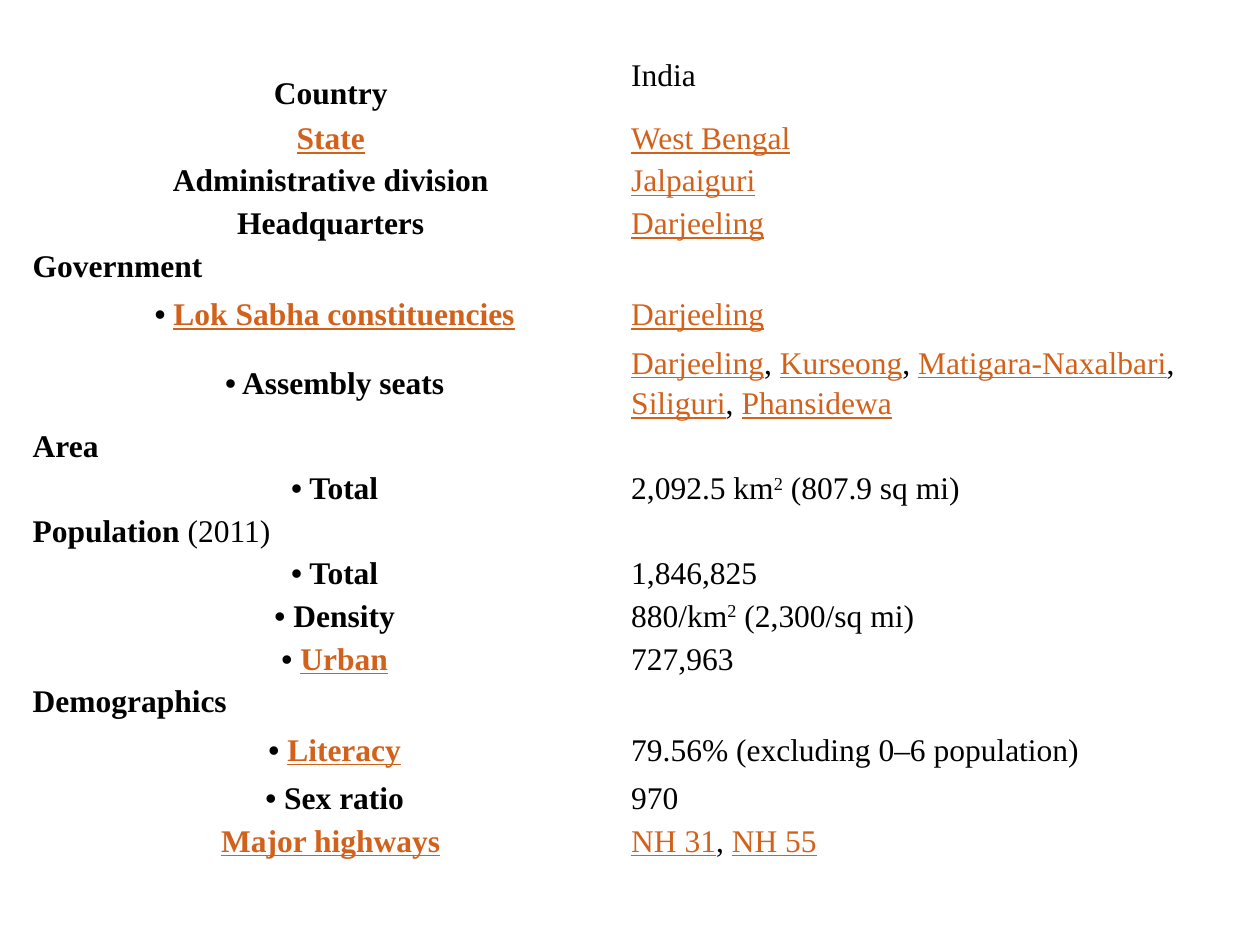
from pptx import Presentation
from pptx.dml.color import RGBColor
from pptx.enum.text import MSO_ANCHOR, PP_ALIGN
from pptx.util import Inches, Pt

MIDDLE = MSO_ANCHOR.MIDDLE
LEFT, CENTER = PP_ALIGN.LEFT, PP_ALIGN.CENTER
BLANK_LAYOUT = 6
BLACK, ORANGE = "000000", "D2611C"
FONT = {"name": "Times New Roman", "size": Pt(18)}
PLAIN = {"color": BLACK, "bold": False, "underline": False}
BOLD = {**PLAIN, "bold": True}
LINK = {"color": ORANGE, "bold": False, "underline": True}
BOLD_LINK = {**LINK, "bold": True}
RAISED = {**PLAIN, "baseline": "30000"}
BULLET = " • "
INSET = 0.01
LOWERED_INSET = 0.3
ROW_HEIGHT = 0.33
SPECIAL_HEIGHTS = {0: 0.66, 5: 0.43, 6: 0.66, 14: 0.43, 17: 0.37}


def hex_color(value):
    return RGBColor.from_string(value)


def label(text):
    return [(text, BOLD)]


def item(text):
    return [(BULLET + text, BOLD)]


def linked_item(text):
    return [(BULLET, BOLD), (text, BOLD_LINK)]


def plain(text):
    return [(text, PLAIN)]


def links(*names):
    spans = [(names[0], LINK)]
    for name in names[1:]:
        spans += [(", ", PLAIN), (name, LINK)]
    return spans


def squared(before, after):
    return [(before, PLAIN), ("2", RAISED), (after, PLAIN)]


DISTRICT_FACTS = [
    (label("Country"), plain("India")),
    ([("State", BOLD_LINK)], links("West Bengal")),
    (label("Administrative division"), links("Jalpaiguri")),
    (label("Headquarters"), links("Darjeeling")),
    (label("Government"), None),
    (linked_item("Lok Sabha constituencies"), links("Darjeeling")),
    (item("Assembly seats"),
     links("Darjeeling", "Kurseong", "Matigara-Naxalbari", "Siliguri", "Phansidewa")),
    (label("Area"), None),
    (item("Total"), squared("2,092.5 km", " (807.9 sq mi)")),
    (label("Population ") + plain("(2011)"), None),
    (item("Total"), plain("1,846,825")),
    (item("Density"), squared("880/km", " (2,300/sq mi)")),
    (linked_item("Urban"), plain("727,963")),
    (label("Demographics"), None),
    (linked_item("Literacy"), plain("79.56% (excluding 0–6 population)")),
    (item("Sex ratio"), plain("970")),
    ([("Major highways", BOLD_LINK)], links("NH 31", "NH 55")),
    ([], []),
]


def add_span(para, text, style):
    span = para.add_run()
    span.text = text
    for name, value in {**FONT, **style}.items():
        if name == "color":
            span.font.color.rgb = hex_color(value)
        elif name == "baseline":
            span._r.get_or_add_rPr().set(name, value)
        else:
            setattr(span.font, name, value)


def fill_cell(cell, spans, alignment):
    cell.vertical_anchor = MIDDLE
    for side in ("left", "right", "top", "bottom"):
        setattr(cell, f"margin_{side}", Inches(INSET))
    para = cell.text_frame.paragraphs[0]
    para.alignment = alignment
    para.line_spacing = 1.15
    para.font.size = FONT["size"]
    for text, style in spans:
        add_span(para, text, style)


def add_facts_table(page, facts):
    heights = [SPECIAL_HEIGHTS.get(i, ROW_HEIGHT) for i in range(len(facts))]
    table = page.shapes.add_table(
        len(facts), 2, Inches(0.25), Inches(0.25), Inches(9.5), Inches(sum(heights))
    ).table
    table.first_row = table.horz_banding = False
    for index, (heading, value) in enumerate(facts):
        table.rows[index].height = Inches(heights[index])
        left_cell, right_cell = table.cell(index, 0), table.cell(index, 1)
        for cell in (left_cell, right_cell):
            cell.fill.background()
        if value is None:
            left_cell.merge(right_cell)
            fill_cell(left_cell, heading, LEFT)
        else:
            fill_cell(left_cell, heading, CENTER)
            fill_cell(right_cell, value, LEFT)
    table.cell(0, 0).margin_top = Inches(LOWERED_INSET)


def main():
    deck = Presentation()
    deck.slide_width, deck.slide_height = Inches(10), Inches(7.5)
    page = deck.slides.add_slide(deck.slide_layouts[BLANK_LAYOUT])
    add_facts_table(page, DISTRICT_FACTS)
    deck.save("out.pptx")


if __name__ == "__main__":
    main()
